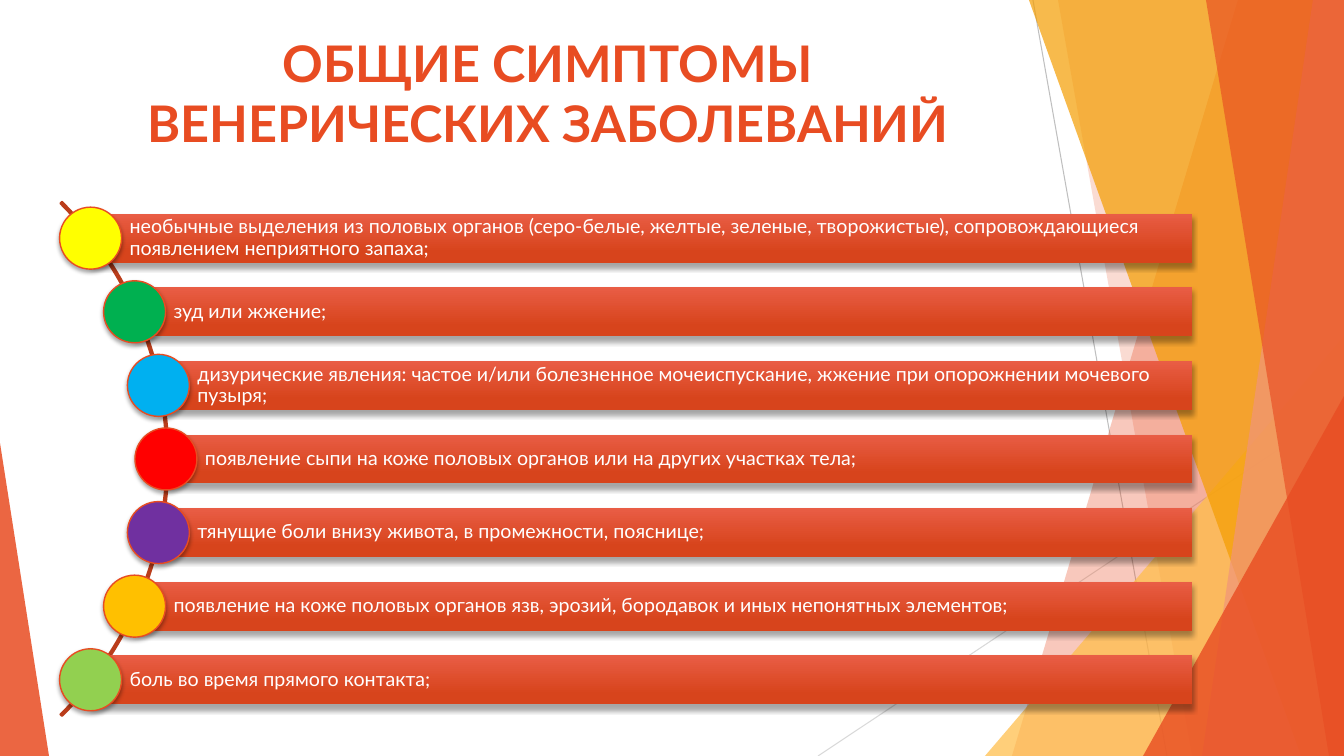
import math

from lxml import etree
from pptx import Presentation
from pptx.dml.color import RGBColor
from pptx.enum.shapes import MSO_CONNECTOR, MSO_SHAPE
from pptx.enum.text import MSO_ANCHOR, PP_ALIGN
from pptx.oxml.ns import qn
from pptx.util import Emu, Pt

STRAIGHT = MSO_CONNECTOR.STRAIGHT
TRIANGLE = MSO_SHAPE.ISOSCELES_TRIANGLE
ARC = MSO_SHAPE.BLOCK_ARC
RECTANGLE = MSO_SHAPE.RECTANGLE
OVAL = MSO_SHAPE.OVAL
MIDDLE, TOP = MSO_ANCHOR.MIDDLE, MSO_ANCHOR.TOP
LEFT, CENTER = PP_ALIGN.LEFT, PP_ALIGN.CENTER

TITLE = "ОБЩИЕ СИМПТОМЫ ВЕНЕРИЧЕСКИХ ЗАБОЛЕВАНИЙ"
SYMPTOMS = [
    ("необычные выделения из половых органов (серо-белые, желтые, зеленые, творожистые), "
     "сопровождающиеся появлением неприятного запаха;", "FFFF00"),
    ("зуд или жжение;", "00B050"),
    ("дизурические явления: частое и/или болезненное мочеиспускание, жжение при опорожнении "
     "мочевого пузыря;", "00B0F0"),
    ("появление сыпи на коже половых органов или на других участках тела;", "FF0000"),
    ("тянущие боли внизу живота, в промежности, пояснице;", "7030A0"),
    ("появление на коже половых органов язв, эрозий, бородавок и иных непонятных элементов;",
     "FFC000"),
    ("боль во время прямого контакта;", "92D050"),
]

THEME = {
    "font": "Lato", "title_size": 36, "body_size": 14,
    "accent": "E84C22", "amber": "FFBD47", "orange": "F49D00", "salmon": "F1947A",
    "white": "FFFFFF", "shadow": "000000", "arc": "BA3D1B",
    "bar_top": "E95D45", "bar_bottom": "D7441C",
}

WIDTH, HEIGHT = 1344, 756
SCALE = 914400 / 100.8

RAYS = [((1033, 0), (1167, HEIGHT), "BFBFBF"), ((WIDTH, 406), (818, HEIGHT), "D9D9D9")]
SHEETS_AND_WEDGES = [
    ("sheet", (1238, 1012), "accent", 30),
    ("sheet", (1058, 1192), "accent", 20),
    ("wedge", (985, 336, 359, 420, 1), "amber", 72),
    ("sheet", (1029, 1301), "orange", 70),
    ("sheet", (1313, 1202), "salmon", 70),
    ("sheet", (1206, 1329), "accent", 65),
    ("wedge", (1143, 396, 201, 360, 1), "accent", 80),
    ("wedge", (0, 443, 49, 313, 0), "accent", 85),
]

TITLE_BOX = (74, 27, 948, 145)
ARC_X, ARC_Y, ARC_SIZE = -195, 459, 727
BEAD_ORBIT = 361
ROW_PITCH = 73.6
BAR_RIGHT, BAR_HEIGHT, BEAD_SIZE = 1192, 49, 62


def px(length):
    return Emu(round(length * SCALE))


def color(code):
    return RGBColor.from_string(code)


def add_preset(page, kind, left, top, width, height):
    shape = page.shapes.add_shape(kind, px(left), px(top), px(width), px(height))
    shape.shadow.inherit = False
    return shape


def fill_solid(shape, code, opacity=100):
    shape.fill.solid()
    shape.fill.fore_color.rgb = color(code)
    if opacity < 100:
        tint = shape._element.spPr.find(".//" + qn("a:srgbClr"))
        etree.SubElement(tint, qn("a:alpha"), val=str(opacity * 1000))


def set_line(shape, code, width):
    shape.line.color.rgb = color(code)
    shape.line.width = Pt(width)


def drop_shadow(shape, blur, distance):
    effects = shape._element.spPr.find(qn("a:effectLst"))
    shadow = etree.SubElement(effects, qn("a:outerShdw"), blurRad=str(Pt(blur)),
                              dist=str(Pt(distance)), dir="5400000", rotWithShape="0")
    tint = etree.SubElement(shadow, qn("a:srgbClr"), val=THEME["shadow"])
    etree.SubElement(tint, qn("a:alpha"), val="35000")


def write(box, text, size, code, align, anchor, bold=False):
    frame = box.text_frame
    frame.word_wrap = True
    frame.vertical_anchor = anchor
    para = frame.paragraphs[0]
    para.text = text
    para.alignment = align
    para.font.name = THEME["font"]
    para.font.size = Pt(size)
    para.font.bold = bold
    para.font.color.rgb = color(code)
    return frame


def add_backdrop(page):
    for start, end, code in RAYS:
        ray = page.shapes.add_connector(STRAIGHT, *map(px, start + end))
        set_line(ray, code, 0.75)
        etree.SubElement(ray._element.spPr, qn("a:effectLst"))
    for kind, geometry, name, opacity in SHEETS_AND_WEDGES:
        if kind == "sheet":
            top_x, bottom_x = geometry
            outline = page.shapes.build_freeform(top_x, 0, scale=SCALE)
            outline.add_line_segments([(WIDTH, 0), (WIDTH, HEIGHT), (bottom_x, HEIGHT)])
            shape = outline.convert_to_shape()
            shape.shadow.inherit = False
        else:
            *bounds, apex = geometry
            shape = add_preset(page, TRIANGLE, *bounds)
            shape.adjustments[0] = apex
        fill_solid(shape, THEME[name], opacity)
        shape.line.fill.background()


def add_arc(page):
    radius = ARC_SIZE / 2
    arc = add_preset(page, ARC, ARC_X - radius, ARC_Y - radius, ARC_SIZE, ARC_SIZE)
    for index, value in enumerate((189, 27, 0.003)):
        arc.adjustments[index] = value
    arc.fill.background()
    set_line(arc, THEME["arc"], 1.5)


def add_symptom(page, step, text, bead_color):
    offset = step * ROW_PITCH
    x = ARC_X + math.sqrt(BEAD_ORBIT ** 2 - offset ** 2)
    y = ARC_Y + offset

    bar = add_preset(page, RECTANGLE, x, y - BAR_HEIGHT / 2, BAR_RIGHT - x, BAR_HEIGHT)
    bar.fill.gradient()
    bar.fill.gradient_angle = 270
    stops = ((0, THEME["bar_top"]), (0.78, THEME["bar_bottom"]))
    for stop, (position, code) in zip(bar.fill.gradient_stops, stops):
        stop.position = position
        stop.color.rgb = color(code)
    bar.line.fill.background()
    drop_shadow(bar, 4, 3)
    frame = write(bar, text, THEME["body_size"], THEME["white"], LEFT, MIDDLE)
    frame.margin_left = px(39)
    frame.margin_right = frame.margin_top = frame.margin_bottom = px(4)
    frame.paragraphs[0].line_spacing = 0.9

    corner = BEAD_SIZE / 2
    bead = add_preset(page, OVAL, x - corner, y - corner, BEAD_SIZE, BEAD_SIZE)
    fill_solid(bead, bead_color)
    set_line(bead, THEME["accent"], 1)
    drop_shadow(bead, 3, 2)


def main():
    deck = Presentation()
    deck.slide_width, deck.slide_height = px(WIDTH), px(HEIGHT)
    page = deck.slides.add_slide(deck.slide_layouts[6])
    add_backdrop(page)
    title = page.shapes.add_textbox(*map(px, TITLE_BOX))
    write(title, TITLE, THEME["title_size"], THEME["accent"], CENTER, TOP, bold=True)
    add_arc(page)
    middle = len(SYMPTOMS) // 2
    for index, (text, bead_color) in enumerate(SYMPTOMS):
        add_symptom(page, index - middle, text, bead_color)
    deck.save("out.pptx")


if __name__ == "__main__":
    main()
